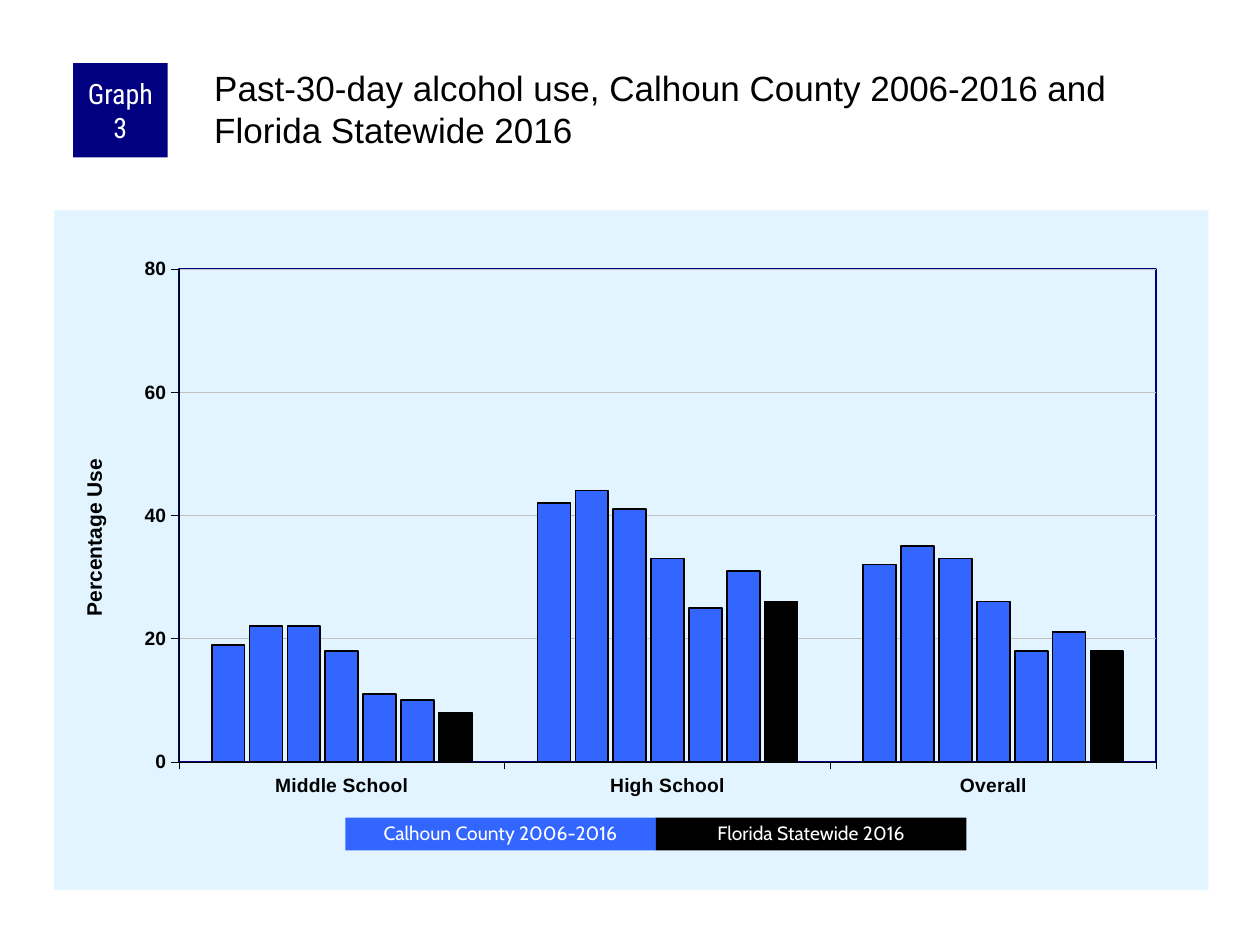
"""Build the slide on past-30-day alcohol use in Calhoun County and Florida."""
from lxml import etree
from pptx import Presentation
from pptx.chart.data import CategoryChartData
from pptx.dml.color import RGBColor
from pptx.enum.chart import XL_CHART_TYPE, XL_TICK_MARK
from pptx.enum.shapes import MSO_SHAPE
from pptx.enum.text import MSO_ANCHOR, MSO_AUTO_SIZE, PP_ALIGN
from pptx.oxml import parse_xml
from pptx.oxml.ns import nsdecls, qn
from pptx.util import Inches, Pt

CLUSTERED = XL_CHART_TYPE.COLUMN_CLUSTERED
OUTSIDE = XL_TICK_MARK.OUTSIDE
RECTANGLE = MSO_SHAPE.RECTANGLE
TOP, MIDDLE = MSO_ANCHOR.TOP, MSO_ANCHOR.MIDDLE
LEFT, CENTER = PP_ALIGN.LEFT, PP_ALIGN.CENTER
NO_AUTOFIT = MSO_AUTO_SIZE.NONE

THEME = {
    "black": RGBColor.from_string("000000"),
    "white": RGBColor.from_string("FFFFFF"),
    "navy": RGBColor.from_string("000080"),
    "county": RGBColor.from_string("3366FF"),
    "grid": RGBColor.from_string("C0C0C0"),
    "panel": RGBColor.from_string("E1F4FF"),
    "title_size": Pt(20),
    "badge_size": Pt(16),
    "axis_title_size": Pt(12),
    "label_size": Pt(11),
    "chart_size": Pt(8),
    "font": "Arial",
    "badge_font": "Roboto Condensed",
    "key_font": "Cabin",
}


def write_text(frame, text, *, size, font, color, bold=False, align=LEFT,
               anchor=MIDDLE, margins=None, spacing=None):
    frame.word_wrap = True
    frame.auto_size = NO_AUTOFIT
    frame.vertical_anchor = anchor
    if margins:
        (frame.margin_left, frame.margin_top,
         frame.margin_right, frame.margin_bottom) = map(Inches, margins)
    para = frame.paragraphs[0]
    para.alignment = align
    para.line_spacing = spacing
    span = para.add_run()
    span.text = text
    span.font.size, span.font.name, span.font.bold = size, font, bold
    span.font.color.rgb = color


def set_layout(parent, position, **shares):
    for old in parent.findall(qn("c:layout")):
        parent.remove(old)
    layout = etree.Element(qn("c:layout"))
    manual = etree.SubElement(layout, qn("c:manualLayout"))
    if "w" in shares:
        etree.SubElement(manual, qn("c:layoutTarget"), val="inner")
    for mode in ("xMode", "yMode"):
        etree.SubElement(manual, qn(f"c:{mode}"), val="edge")
    for name, share in shares.items():
        etree.SubElement(manual, qn(f"c:{name}"), val=str(share))
    parent.insert(position, layout)


deck = Presentation()
deck.slide_width, deck.slide_height = Inches(10), Inches(7.5)
COLUMN, ROW = deck.slide_width // 100, deck.slide_height // 75
grid_cells = {
    "chart": (4.3, 16.7, 91.6, 53.9),
    "badge": (5.8, 5, 7.5, 7.5),
    "title": (16.7, 5, 79.2, 8.3),
    "county_key": (27.4, 64.9, 24.65, 2.6),
    "state_key": (52.05, 64.9, 24.65, 2.6),
}
places = {
    name: [round(count * unit) for count, unit in zip(cell, (COLUMN, ROW) * 2)]
    for name, cell in grid_cells.items()
}
page = deck.slides.add_slide(deck.slide_layouts[5])

title = page.shapes.title
title.left, title.top, title.width, title.height = places["title"]
write_text(
    title.text_frame,
    "Past-30-day alcohol use, Calhoun County 2006-2016 and Florida Statewide 2016",
    size=THEME["title_size"], font=THEME["font"], color=THEME["black"],
    anchor=TOP, margins=(0.03, 0.03, 0, 0),
)

use_rates = {
    "Middle School": (19, 22, 22, 18, 11, 10, 8),
    "High School": (42, 44, 41, 33, 25, 31, 26),
    "Overall": (32, 35, 33, 26, 18, 21, 18),
}
chart_data = CategoryChartData()
chart_data.categories = list(use_rates)
for number, rates in enumerate(zip(*use_rates.values()), 1):
    chart_data.add_series(f"Series {number}", rates)
chart = page.shapes.add_chart(CLUSTERED, *places["chart"], chart_data).chart
chart.has_legend = chart.has_title = False
chart.font.size, chart.font.name = THEME["chart_size"], THEME["font"]
chart.font.color.rgb = THEME["black"]

bars = chart.plots[0]
bars.gap_width, bars.overlap, bars.vary_by_categories = 200, -15, False
for series in bars.series:
    is_state = series.name == "Series 7"
    series.format.fill.solid()
    series.format.fill.fore_color.rgb = THEME["black" if is_state else "county"]
    series.format.line.color.rgb = THEME["black"]
    series.format.line.width = Pt(1)

for axis in (chart.category_axis, chart.value_axis):
    axis.major_tick_mark = OUTSIDE
    axis.format.line.color.rgb = THEME["black"]
    axis.format.line.width = Pt(0.25)
    label_font = axis.tick_labels.font
    label_font.size, label_font.name = THEME["label_size"], THEME["font"]
    label_font.bold = True
    label_font.color.rgb = THEME["black"]

percent_axis = chart.value_axis
percent_axis.minimum_scale, percent_axis.maximum_scale = 0, 80
percent_axis.major_unit = 20
percent_axis.major_gridlines.format.line.color.rgb = THEME["grid"]
percent_axis.major_gridlines.format.line.width = Pt(0.25)
axis_title = percent_axis.axis_title
write_text(axis_title.text_frame, "Percentage Use", size=THEME["axis_title_size"],
           font=THEME["font"], color=THEME["black"], bold=True, align=CENTER)
title_body = axis_title.element.find(f".//{qn('a:bodyPr')}")
title_body.set("rot", "-5400000")
title_body.set("vert", "horz")
set_layout(axis_title.element, 1, x=0.02, y=0.36)

plot_area = chart.element.find(f".//{qn('c:plotArea')}")
set_layout(plot_area, 0, x=0.108, y=0.086, w=0.847, h=0.726)
plot_area.append(parse_xml(
    f'<c:spPr {nsdecls("c", "a")}><a:noFill/><a:ln w="{Pt(1)}"><a:solidFill>'
    f'<a:srgbClr val="{THEME["navy"]}"/></a:solidFill></a:ln></c:spPr>'
))
chart.element.find(qn("c:chart")).addnext(parse_xml(
    f'<c:spPr {nsdecls("c", "a")}><a:solidFill><a:srgbClr val="{THEME["panel"]}"/>'
    f'</a:solidFill><a:ln><a:noFill/></a:ln></c:spPr>'
))

badge_format = {"size": THEME["badge_size"], "font": THEME["badge_font"],
                "margins": (0.05, 0, 0.05, 0)}
key_format = {"size": THEME["label_size"], "font": THEME["key_font"], "spacing": 0.9}
for name, text, fill, text_format in (
    ("badge", "Graph 3", "navy", badge_format),
    ("county_key", "Calhoun County 2006-2016", "county", key_format),
    ("state_key", "Florida Statewide 2016", "black", key_format),
):
    box = page.shapes.add_shape(RECTANGLE, *places[name])
    box.shadow.inherit = False
    box.fill.solid()
    box.fill.fore_color.rgb = THEME[fill]
    box.line.fill.background()
    write_text(box.text_frame, text, color=THEME["white"], align=CENTER, **text_format)

deck.save("out.pptx")
